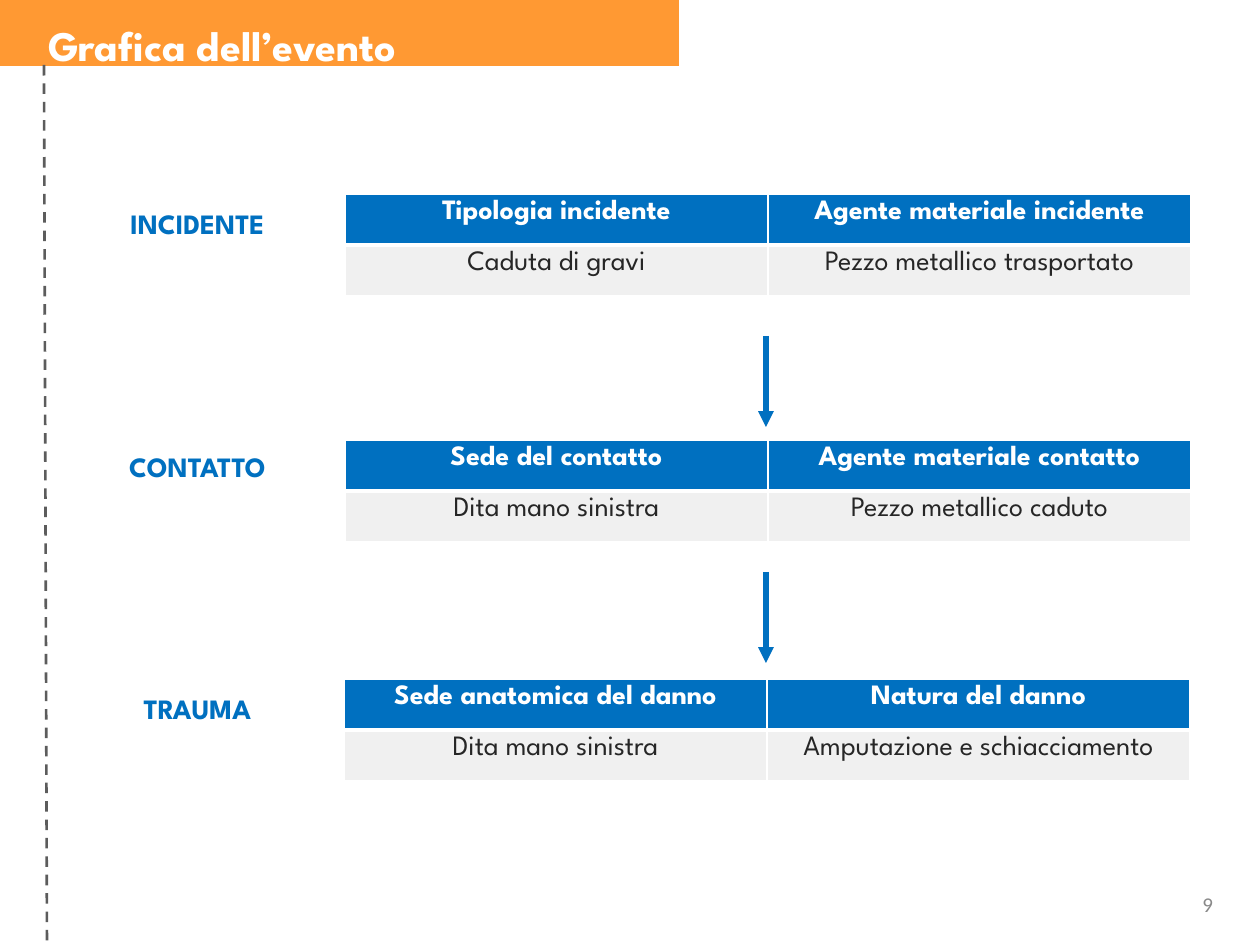
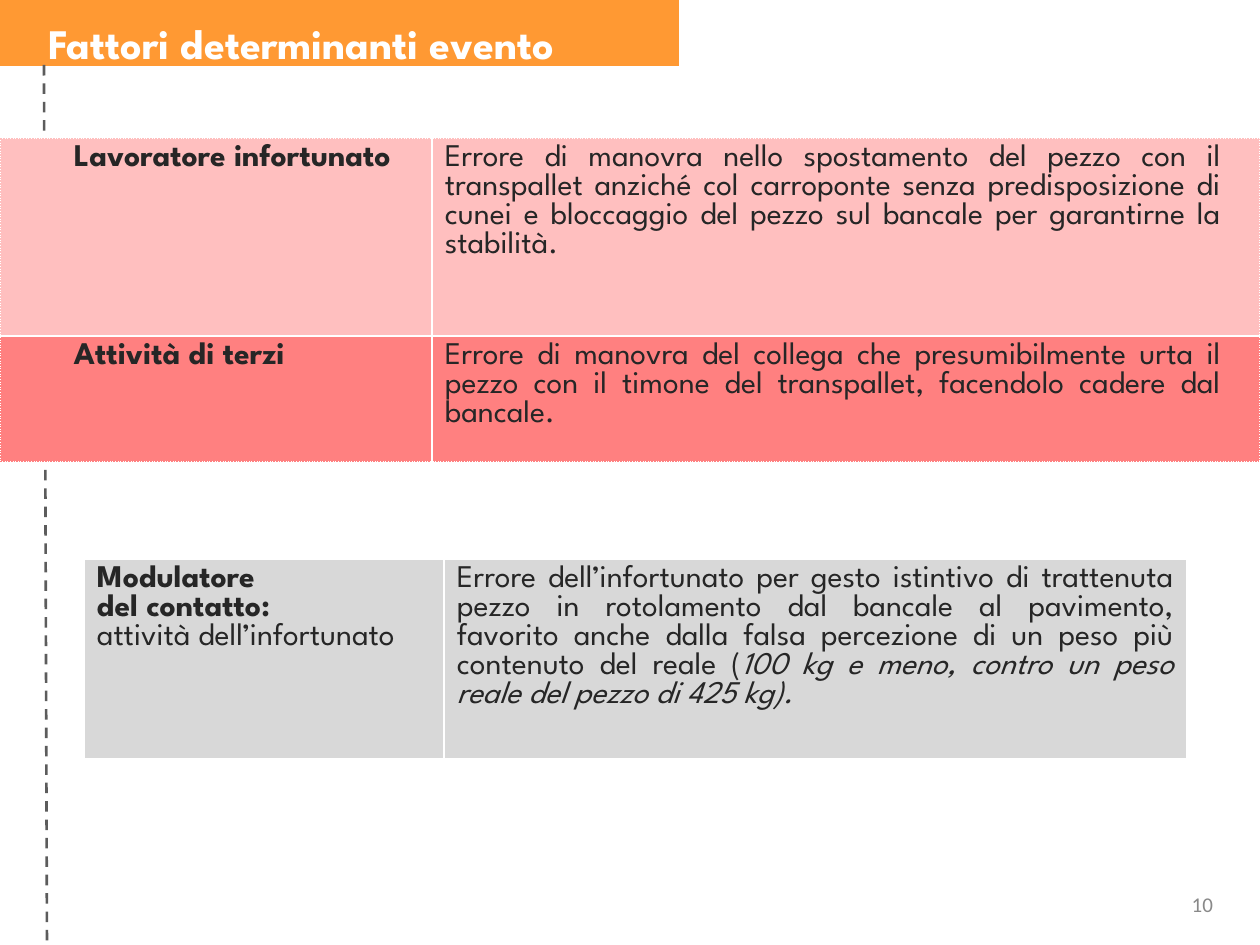
from lxml.etree import SubElement
from pptx import Presentation
from pptx.dml.color import RGBColor
from pptx.enum.dml import MSO_LINE
from pptx.enum.shapes import MSO_CONNECTOR, MSO_SHAPE
from pptx.enum.text import MSO_ANCHOR, PP_ALIGN
from pptx.oxml.ns import qn
from pptx.util import Pt

PX = 914400 // 126 + 1 / 7  # EMU in one px
ORANGE, BLUE, WHITE, INK = "FF9933", "0070C0", "FFFFFF", "262626"
DASH_GRAY, NUMBER_GRAY, PALE_GRAY, MID_GRAY = "5C5C5C", "898989", "F0F0F0", "D8D8D8"
PINK, RED = "FFBFBF", "FF8080"
FONT = "League Spartan"
LEFT, CENTER, RIGHT, JUSTIFY = PP_ALIGN.LEFT, PP_ALIGN.CENTER, PP_ALIGN.RIGHT, PP_ALIGN.JUSTIFY
rgb = RGBColor.from_string


def write(holder, paragraphs, size, color, align=LEFT, margins=(13, 6, 13, 6), font=FONT):
    """Fill a text box or cell; each paragraph is a list of (text, style) runs."""
    frame = holder.text_frame
    frame.word_wrap = True
    for side, margin in zip(("left", "top", "right", "bottom"), margins):
        setattr(holder if hasattr(holder, "margin_left") else frame, f"margin_{side}", round(margin * PX))
    for index, runs in enumerate(paragraphs):
        paragraph = frame.add_paragraph() if index else frame.paragraphs[0]
        paragraph.alignment = align
        for text, style in runs:
            run = paragraph.add_run()
            run.text = text
            run.font.color.rgb = rgb(color)
            for key, value in {"name": font, "size": Pt(size), "bold": False, **style}.items():
                setattr(run.font, key, value)


def add_grid(slide, left, top, widths, heights, fills, dotted_edge=False):
    """Add a table with white rules, a fill per row and a heavier rule below the first row."""
    box = [round(n * PX) for n in (left, top, sum(widths), sum(heights))]
    table = slide.shapes.add_table(len(heights), len(widths), *box).table
    table.first_row = table.horz_banding = False
    for column, width in zip(table.columns, widths):
        column.width = round(width * PX)
    for r, height in enumerate(heights):
        table.rows[r].height = round(height * PX)
        for c in range(len(widths)):
            cell = table.cell(r, c)
            outer = {"L": c == 0, "R": c == len(widths) - 1, "T": r == 0, "B": r == len(heights) - 1}
            for side, on_edge in outer.items():
                dotted = dotted_edge and on_edge
                heavy = not dotted_edge and (r, side) in ((0, "B"), (1, "T"))
                points = 0.75 if dotted else 3 if heavy else 1
                rule = SubElement(cell._tc.get_or_add_tcPr(), qn(f"a:ln{side}"), w=str(Pt(points)))
                SubElement(SubElement(rule, qn("a:solidFill")), qn("a:srgbClr"), val=WHITE)
                SubElement(rule, qn("a:prstDash"), val="sysDot" if dotted else "solid")
            cell.fill.solid()
            cell.fill.fore_color.rgb = rgb(fills[r])
    return table


presentation = Presentation()
presentation.slide_width, presentation.slide_height = round(1260 * PX), round(945 * PX)
BOLD, PLAIN, ITALIC = {"bold": True}, {}, {"italic": True}

# Shared frame: title band, dashed margin line, page number, title
slides = []
for title, title_top, number in (("Grafica dell’evento", 0, "9"), ("Fattori determinanti evento", -2, "10")):
    slide = presentation.slides.add_slide(presentation.slide_layouts[6])
    slides.append(slide)
    band = slide.shapes.add_shape(MSO_SHAPE.RECTANGLE, *[round(n * PX) for n in (-15, 0, 694, 66)])
    band.shadow.inherit = False
    band.fill.solid()
    band.fill.fore_color.rgb = rgb(ORANGE)
    band.line.fill.background()
    margin_line = slide.shapes.add_connector(
        MSO_CONNECTOR.STRAIGHT, *[round(n * PX) for n in (44, 65, 47, 945)])
    margin_line.line.color.rgb = rgb(DASH_GRAY)
    margin_line.line.width = Pt(1.5)
    margin_line.line.dash_style = MSO_LINE.DASH
    SubElement(margin_line._element.spPr, qn("a:effectLst"))
    page_number = slide.shapes.add_textbox(*[round(n * PX) for n in (1155, 886, 71, 53)])
    write(page_number, [[(number, PLAIN)]], 12, NUMBER_GRAY, RIGHT, font="Calibri")
    heading = slide.shapes.add_textbox(*[round(n * PX) for n in (35, title_top, 987, 63)])
    write(heading, [[(title, BOLD)]], 24, WHITE, margins=(13, 20, 13, 4))

event, factors = slides

# Event chain: one label and table per stage
stages = [
    ("INCIDENTE", 194, 345, 194,
     [("Tipologia incidente", "Agente materiale incidente"),
      ("Caduta di gravi", "Pezzo metallico trasportato")]),
    ("CONTATTO", 437, 345, 440,
     [("Sede del contatto", "Agente materiale contatto"),
      ("Dita mano sinistra", "Pezzo metallico caduto")]),
    ("TRAUMA", 679, 344, 679,
     [("Sede anatomica del danno", "Natura del danno"),
      ("Dita mano sinistra", "Amputazione e schiacciamento")]),
]
for stage, label_top, left, top, rows in stages:
    label = event.shapes.add_textbox(*[round(n * PX) for n in (84, label_top, 227, 50)])
    label.text_frame.vertical_anchor = MSO_ANCHOR.MIDDLE
    write(label, [[(stage, BOLD)]], 16, BLUE, CENTER, (13, 15, 13, 6))
    details = add_grid(event, left, top, (423, 423), (51, 51), (BLUE, PALE_GRAY))
    for r, (color, style) in enumerate(((WHITE, BOLD), (INK, PLAIN))):
        for c, text in enumerate(rows[r]):
            write(details.cell(r, c), [[(text, style)]], 16, color, CENTER)

# Arrows between the stages
for top in (336, 572):
    arrow = event.shapes.add_connector(
        MSO_CONNECTOR.STRAIGHT, *[round(n * PX) for n in (766, top, 766, top + 91)])
    arrow.line.color.rgb = rgb(BLUE)
    arrow.line.width = Pt(3)
    SubElement(arrow.line._get_or_add_ln(), qn("a:tailEnd"), type="triangle")
    SubElement(arrow._element.spPr, qn("a:effectLst"))

# Determining factors
causes = [
    ("Lavoratore infortunato",
     "Errore di manovra nello spostamento del pezzo con il transpallet anziché col carroponte "
     "senza predisposizione di cunei e bloccaggio del pezzo sul bancale per garantirne la stabilità."),
    ("Attività di terzi",
     "Errore di manovra del collega che presumibilmente urta il pezzo con il timone del "
     "transpallet, facendolo cadere dal bancale."),
]
cause_table = add_grid(factors, 0, 138, (432, 828), (198, 126), (PINK, RED), dotted_edge=True)
for r, (cause, explanation) in enumerate(causes):
    write(cause_table.cell(r, 0), [[(cause, BOLD)]], 18, INK, margins=(74, 6, 13, 6))
    write(cause_table.cell(r, 1), [[(explanation, PLAIN)]], 18, INK, JUSTIFY, (13, 6, 39, 6))

# Contact modulator
modulator = add_grid(factors, 84, 559, (360, 743), (200,), (MID_GRAY,))
write(modulator.cell(0, 0),
      [[("Modulatore", BOLD)], [("del contatto:", BOLD)], [("attività dell’infortunato", PLAIN)]], 18, INK)
write(modulator.cell(0, 1),
      [[("Errore dell’infortunato per gesto istintivo di trattenuta pezzo in rotolamento dal bancale "
         "al pavimento, favorito anche dalla falsa percezione di un peso più contenuto del reale (", PLAIN),
        ("100 kg e meno, contro un peso reale del pezzo di 425 kg).", ITALIC)]], 18, INK, JUSTIFY)

presentation.save("out.pptx")
